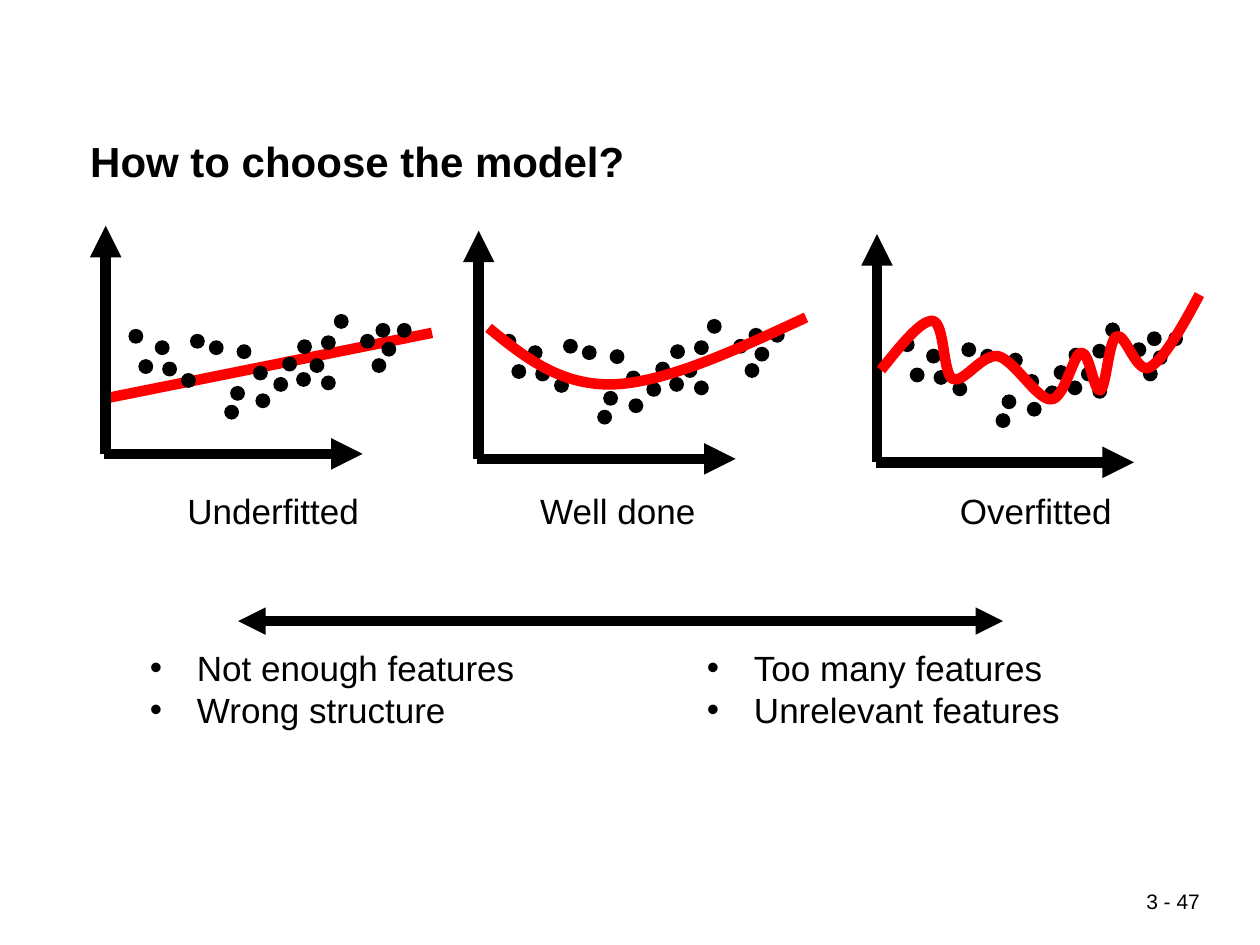
from dataclasses import dataclass

from lxml.etree import SubElement
from pptx import Presentation
from pptx.dml.color import RGBColor
from pptx.enum.shapes import MSO_CONNECTOR, MSO_SHAPE
from pptx.enum.text import PP_ALIGN
from pptx.oxml.ns import qn
from pptx.util import Cm, Pt


@dataclass(frozen=True)
class Theme:
    """Colours, font and sizes shared by the whole slide."""

    ink: RGBColor = RGBColor(0, 0, 0)
    fit: RGBColor = RGBColor(255, 0, 0)
    font: str = "Arial"
    title: Pt = Pt(24)
    body: Pt = Pt(20)
    number: Pt = Pt(12)
    stroke: Pt = Pt(6)
    span: Pt = Pt(5.25)


THEME = Theme()
DOT_SIZE = 0.3
AXIS_HEIGHT, AXIS_WIDTH = 4.6, 5.18
SAMPLES = [
    (0.46, 2.08), (0.66, 2.69), (1.14, 2.74), (0.99, 2.31), (5.87, 1.96),
    (1.52, 2.97), (2.08, 2.31), (1.7, 2.18), (2.39, 3.61), (2.51, 3.23),
    (2.64, 2.39), (2.97, 2.82), (3.02, 3.38), (3.38, 3.05), (3.56, 2.64),
    (3.86, 2.29), (3.84, 2.95), (4.11, 2.67), (4.34, 2.21), (4.34, 3.02),
    (4.6, 1.78), (5.13, 2.18), (5.36, 2.67), (5.56, 2.34), (5.44, 1.96),
]
LINEAR_FIT = [(0, 3.48), (6.58, 2.16)]
SMOOTH_FIT = [
    (0.2, 1.96), (0.91, 2.54), (1.63, 3.12), (2.69, 3.1),
    (3.76, 3.07), (5.18, 2.41), (6.6, 1.75),
]
WIGGLY_FIT = [
    (0.08, 2.74), (0.48, 2.24), (0.89, 1.73), (1.12, 1.75),
    (1.37, 1.78), (1.32, 2.79), (1.52, 2.92),
    (1.75, 3.02), (2.11, 2.41), (2.44, 2.46),
    (2.77, 2.54), (3.23, 3.35), (3.51, 3.33),
    (3.78, 3.33), (3.96, 2.41), (4.11, 2.39),
    (4.29, 2.36), (4.37, 3.2), (4.5, 3.15),
    (4.62, 3.1), (4.67, 2.13), (4.83, 2.06),
    (5, 1.98), (5.23, 2.82), (5.49, 2.69),
    (5.77, 2.54), (6.15, 1.88), (6.5, 1.22),
]
PANELS = [
    (2.13, 4.55, LINEAR_FIT, 3.53, "Underfitted"),
    (9.65, 4.65, SMOOTH_FIT, 10.64, "Well done"),
    (17.68, 4.72, WIGGLY_FIT, 19.1, "Overfitted"),
]
CAUSES = [
    (2.77, ["Not enough features", "Wrong structure"]),
    (14, ["Too many features", "Unrelevant features"]),
]


def add_text(slide, box, lines, size, bold=False, align=PP_ALIGN.LEFT, bullets=False):
    """Place lines of text in a box given as left, top, width, height in cm."""
    frame = slide.shapes.add_textbox(*map(Cm, box)).text_frame
    frame.word_wrap = True
    frame.text = "\n".join(lines)
    for paragraph in frame.paragraphs:
        paragraph.alignment = align
        if bullets:
            properties = paragraph._p.get_or_add_pPr()
            properties.set("marL", str(Cm(0.95)))
            properties.set("indent", str(-Cm(0.95)))
            SubElement(properties, qn("a:buFont"), typeface=THEME.font)
            SubElement(properties, qn("a:buChar"), char="•")
        font = paragraph.font
        font.name, font.size, font.bold = THEME.font, size, bold
        font.color.rgb = THEME.ink
    return frame


def add_line(shapes, start, end, color, width, arrows=()):
    """Draw a straight line in cm with triangles at the named ends."""
    connector = shapes.add_connector(
        MSO_CONNECTOR.STRAIGHT, *map(Cm, (*start, *end))
    )
    connector.line.color.rgb = color
    connector.line.width = width
    for arrow in arrows:
        SubElement(connector.line._get_or_add_ln(), qn(f"a:{arrow}"), type="triangle")
    SubElement(connector._element.spPr, qn("a:effectLst"))


def add_curve(shapes, points):
    """Draw a chain of cubic curves, three points for each after the start."""
    start, *controls = [(Cm(x), Cm(y)) for x, y in points]
    builder = shapes.build_freeform(*start)
    builder.add_line_segments(controls, close=False)
    curve = builder.convert_to_shape()
    curve.shadow.inherit = False
    curve.fill.background()
    curve.line.color.rgb = THEME.fit
    curve.line.width = THEME.stroke
    segments = list(curve._element.iter(qn("a:lnTo")))
    drawing = segments[0].getparent()
    for first in range(0, len(segments), 3):
        cubic = SubElement(drawing, qn("a:cubicBezTo"))
        for segment in segments[first:first + 3]:
            cubic.append(segment[0])
            drawing.remove(segment)


def add_panel(slide, left, top, fit):
    """Draw the axes, samples and fitted model from the top of the vertical axis."""
    shapes = slide.shapes.add_group_shape().shapes
    points = [(left + x, top + y) for x, y in fit]
    base = top + AXIS_HEIGHT
    if len(points) == 2:
        add_line(shapes, *points, THEME.fit, THEME.stroke)
    add_line(shapes, (left, top), (left, base), THEME.ink, THEME.stroke, ["headEnd"])
    add_line(shapes, (left - 0.03, base), (left + AXIS_WIDTH, base),
             THEME.ink, THEME.stroke, ["tailEnd"])
    for x, y in SAMPLES:
        dot = shapes.add_shape(
            MSO_SHAPE.OVAL, *map(Cm, (left + x, top + y, DOT_SIZE, DOT_SIZE))
        )
        dot.shadow.inherit = False
        dot.fill.solid()
        dot.fill.fore_color.rgb = THEME.ink
        dot.line.fill.background()
    if len(points) > 2:
        add_curve(shapes, points)


def add_causes(slide, top):
    """Draw the double arrow and the two lists of causes below it."""
    add_line(slide.shapes, (4.8, top), (20.22, top), THEME.ink, THEME.span,
             ["headEnd", "tailEnd"])
    for left, lines in CAUSES:
        add_text(slide, (left, top + 0.38, 8.79, 1.96), lines, THEME.body, bullets=True)


def main():
    """Build the slide and save it."""
    presentation = Presentation()
    presentation.slide_width, presentation.slide_height = Cm(25.4), Cm(19.05)
    slide = presentation.slides.add_slide(presentation.slide_layouts[6])
    title = add_text(slide, (1.57, 2.54, 22.4, 1.7), ["How to choose the model?"],
                     THEME.title, bold=True)
    title.margin_top = Cm(0.2)
    add_causes(slide, 12.52)
    for left, top, fit, label_left, label in PANELS:
        add_panel(slide, left, top, fit)
        add_text(slide, (label_left, 9.75, 4.32, 1.12), [label], THEME.body)
    add_text(slide, (21.49, 17.78, 2.95, 0.84), ["3 - 47"], THEME.number,
             align=PP_ALIGN.RIGHT)
    presentation.save("out.pptx")


if __name__ == "__main__":
    main()
